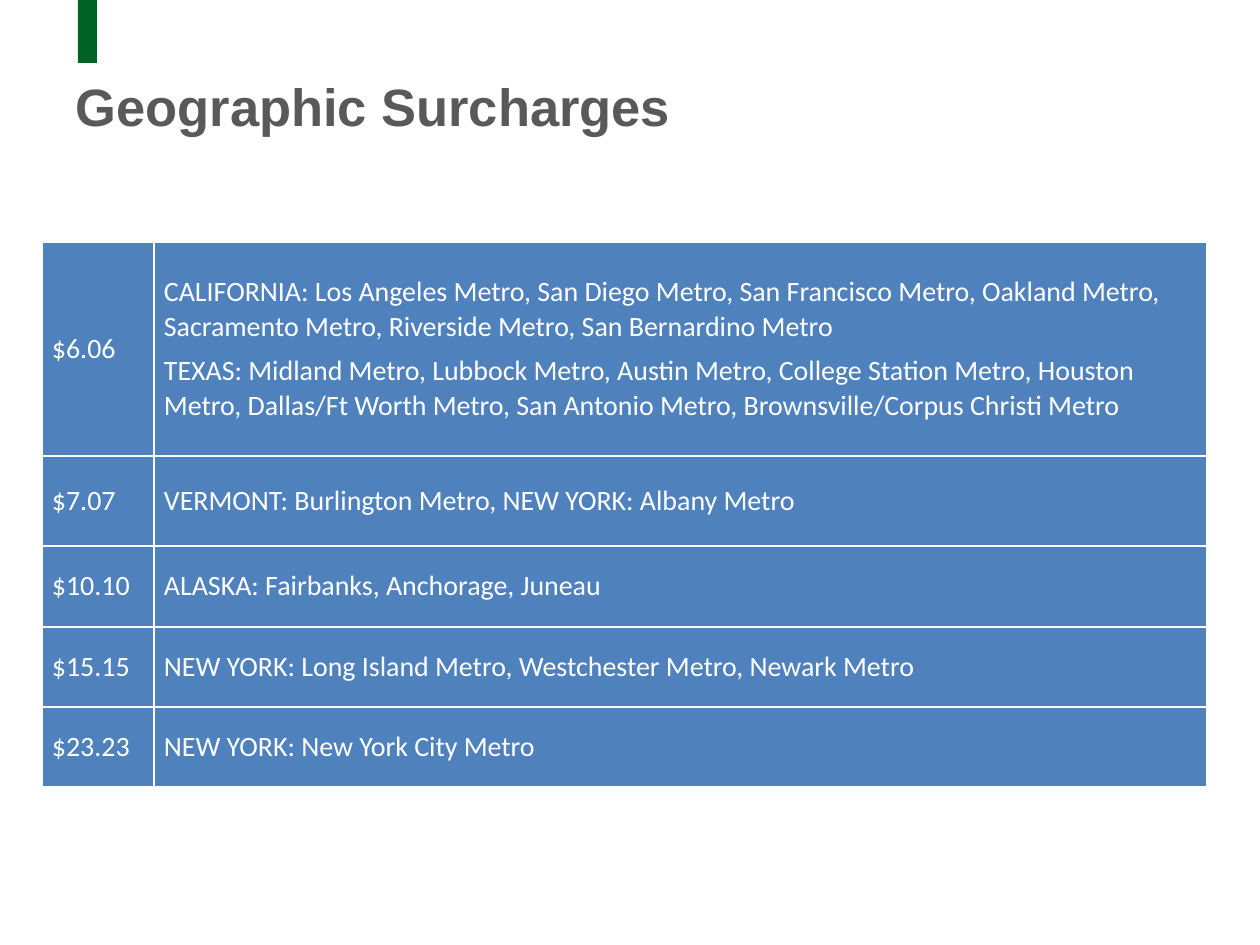
from lxml import etree
from pptx import Presentation
from pptx.dml.color import RGBColor
from pptx.enum.shapes import MSO_SHAPE
from pptx.enum.text import MSO_ANCHOR, PP_ALIGN
from pptx.oxml.ns import qn
from pptx.util import Emu, Pt

RECT = MSO_SHAPE.RECTANGLE
TOP, MIDDLE = MSO_ANCHOR.TOP, MSO_ANCHOR.MIDDLE
LEFT = PP_ALIGN.LEFT
GREEN, GRAY, BLUE, WHITE = "006325", "595959", "4F81BD", "FFFFFF"

COLUMNS = [112, 1053]
ROW_HEIGHTS = [214, 90, 81, 80, 80]
SURCHARGES = [
    ("$6.06", [
        "CALIFORNIA: Los Angeles Metro, San Diego Metro, San Francisco Metro, "
        "Oakland Metro, Sacramento Metro, Riverside Metro, San Bernardino Metro",
        "TEXAS: Midland Metro, Lubbock Metro, Austin Metro, College Station Metro, "
        "Houston Metro, Dallas/Ft Worth Metro, San Antonio Metro, "
        "Brownsville/Corpus Christi Metro",
    ]),
    ("$7.07", ["VERMONT: Burlington Metro, NEW YORK: Albany Metro"]),
    ("$10.10", ["ALASKA: Fairbanks, Anchorage, Juneau"]),
    ("$15.15", ["NEW YORK: Long Island Metro, Westchester Metro, Newark Metro"]),
    ("$23.23", ["NEW YORK: New York City Metro"]),
]


def px(n):
    """Turn pixels at 126 to the inch into EMU."""
    return Emu(round(n * 914400 / 126))


def color(value):
    """Turn a hex string into a colour."""
    return RGBColor.from_string(value)


def set_font(p, name, size, value, bold=False):
    """Format all runs of a paragraph."""
    font = p.font
    font.name, font.size, font.bold = name, Pt(size), bold
    font.color.rgb = color(value)


def add_accent(s):
    """Add the green bar at the top edge."""
    sp = s.shapes.add_shape(RECT, px(78), 0, px(19), px(63))
    sp.shadow.inherit = False
    sp.fill.solid()
    sp.fill.fore_color.rgb = color(GREEN)
    sp.line.fill.background()


def set_title(s, text):
    """Place and format the title."""
    sp = s.shapes.title
    sp.left, sp.top, sp.width, sp.height = px(63), px(64), px(1090), px(95)
    tf = sp.text_frame
    tf.text = text
    tf.vertical_anchor = TOP
    tf.margin_top = px(10)
    p = tf.paragraphs[0]
    p.alignment = LEFT
    set_font(p, "Arial", 30, GRAY, True)


def set_borders(cell, value, width):
    """Draw one solid line on all four sides of a cell."""
    tc_pr = cell._tc.get_or_add_tcPr()
    for i, side in enumerate(("a:lnL", "a:lnR", "a:lnT", "a:lnB")):
        ln = etree.Element(qn(side), w=str(Pt(width)))
        fill = etree.SubElement(ln, qn("a:solidFill"))
        etree.SubElement(fill, qn("a:srgbClr"), val=value)
        tc_pr.insert(i, ln)


def fill_cell(cell, texts):
    """Write paragraphs into a cell and format it."""
    cell.fill.solid()
    cell.fill.fore_color.rgb = color(BLUE)
    set_borders(cell, WHITE, 1)
    cell.vertical_anchor = MIDDLE
    cell.margin_left = cell.margin_right = px(10)
    cell.margin_top = cell.margin_bottom = 0
    tf = cell.text_frame
    tf.text = "\n".join(texts)
    for i, p in enumerate(tf.paragraphs):
        p.space_before = Pt(3 if i else 0)
        p.space_after = Pt(3)
        set_font(p, "Calibri", 16, WHITE)


def add_surcharge_table(s):
    """Add the table of surcharges and the areas they apply to."""
    frame = s.shapes.add_table(len(SURCHARGES), len(COLUMNS), px(42), px(242),
                               px(sum(COLUMNS)), px(sum(ROW_HEIGHTS)))
    table = frame.table
    table.first_row = table.horz_banding = False
    for column, width in zip(table.columns, COLUMNS):
        column.width = px(width)
    for row, height, (price, areas) in zip(table.rows, ROW_HEIGHTS, SURCHARGES):
        row.height = px(height)
        fill_cell(row.cells[0], [price])
        fill_cell(row.cells[1], areas)


def main():
    """Build the slide and save it."""
    prs = Presentation()
    prs.slide_width, prs.slide_height = px(1260), px(945)
    s = prs.slides.add_slide(prs.slide_layouts[5])
    add_accent(s)
    set_title(s, "Geographic Surcharges")
    add_surcharge_table(s)
    prs.save("out.pptx")


if __name__ == "__main__":
    main()
